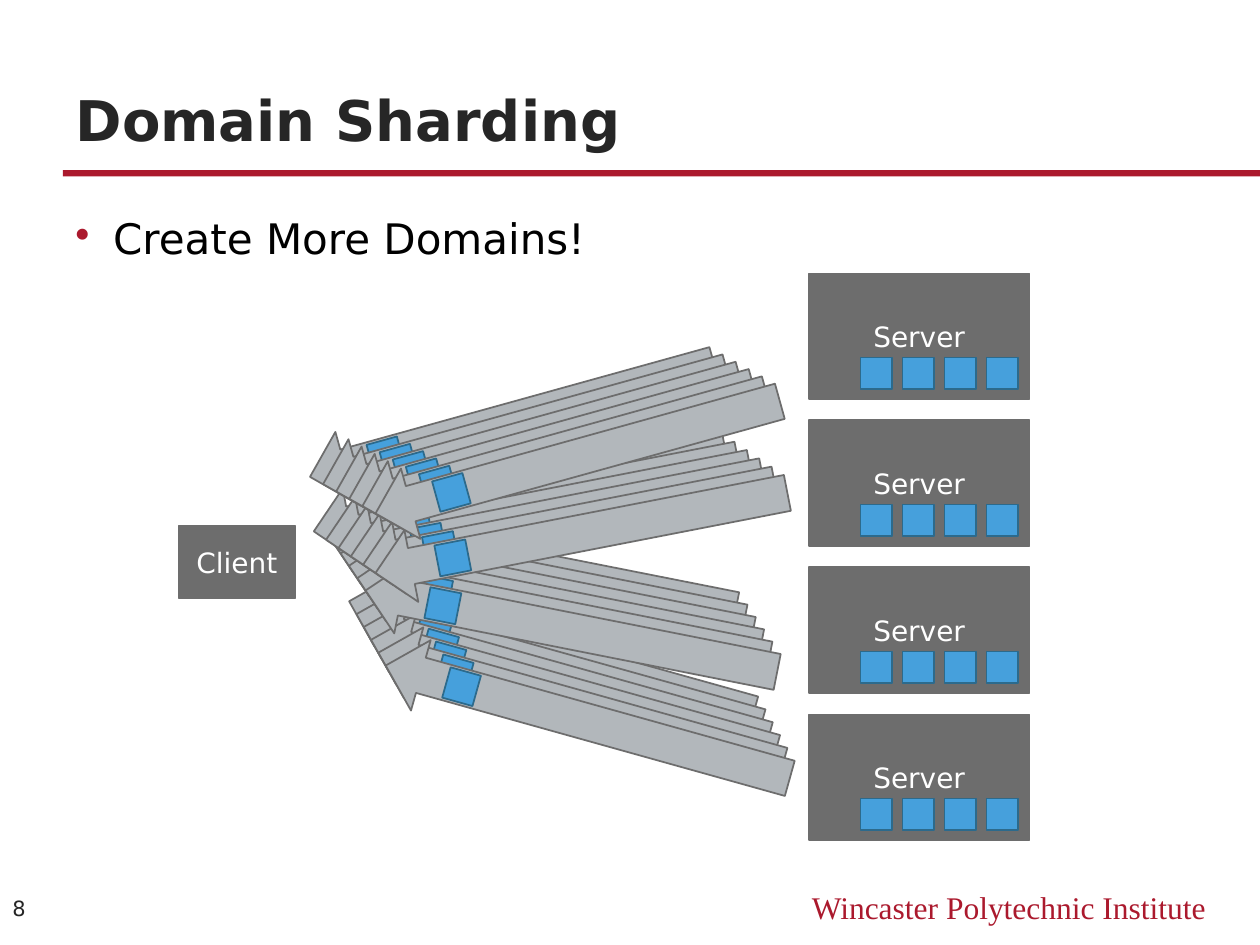
"""Build the Domain Sharding slide."""
from dataclasses import dataclass
from math import cos, radians, sin
from typing import Any

from lxml import etree
from pptx import Presentation
from pptx.dml.color import RGBColor
from pptx.enum.shapes import MSO_SHAPE
from pptx.enum.text import MSO_ANCHOR, MSO_AUTO_SIZE, PP_ALIGN
from pptx.oxml.ns import qn
from pptx.util import Inches, Pt

RECT, ARROW = MSO_SHAPE.RECTANGLE, MSO_SHAPE.LEFT_ARROW
LEFT, MID, RIGHT = PP_ALIGN.LEFT, PP_ALIGN.CENTER, PP_ALIGN.RIGHT
TOP, CENTER, LOW = MSO_ANCHOR.TOP, MSO_ANCHOR.MIDDLE, MSO_ANCHOR.BOTTOM
FIT, FIXED = MSO_AUTO_SIZE.SHAPE_TO_FIT_TEXT, MSO_AUTO_SIZE.NONE
SANS, SERIF = "DejaVu Sans", "Times New Roman"
COLORS = {
    "red": "AB192D", "ink": "262626", "black": "000000", "white": "FFFFFF",
    "gray": "6D6D6D", "pale": "B2B7BB", "blue": "46A0DC", "navy": "2C6A8C",
}
SIDE, LONG, TALL = 0.25, 3.33, 0.58
REACH = 1.04
COUNT = 6


@dataclass
class Box:
    """Place and size in inches."""
    x: float
    y: float
    w: float
    h: float


@dataclass
class Style:
    """Look of one run of text."""
    size: int
    color: str
    font: str = SANS
    bold: bool = False
    align: Any = LEFT


@dataclass
class Fan:
    """First and last arrow corners and the shared turn."""
    x: float
    y: float
    endx: float
    endy: float
    turn: float


LABEL = Style(16, "white", align=MID)
FANS = [
    Fan(2.71, 4.93, 3, 5.44, 15.6),
    Fan(2.54, 4.23, 2.87, 4.72, 11.2),
    Fan(2.46, 3.61, 2.95, 3.94, 349),
    Fan(2.4, 3.05, 2.92, 3.34, 344.5),
]


def paint(name: str) -> RGBColor:
    """Look up a colour."""
    return RGBColor.from_string(COLORS[name])


def place(shape: Any, box: Box) -> None:
    """Move and size a shape."""
    shape.left, shape.top = Inches(box.x), Inches(box.y)
    shape.width, shape.height = Inches(box.w), Inches(box.h)


def write(shape: Any, text: str, style: Style, anchor: Any, wrap: bool = True) -> Any:
    """Put one styled run in a shape and return its paragraph."""
    frame = shape.text_frame
    frame.word_wrap = wrap
    frame.vertical_anchor = anchor
    para = frame.paragraphs[0]
    para.alignment = style.align
    run = para.add_run()
    run.text = text
    font = run.font
    font.name, font.size, font.bold = style.font, Pt(style.size), style.bold
    font.color.rgb = paint(style.color)
    return para


def draw(shapes: Any, kind: Any, box: Box, fill: str, line: str = "", turn: float = 0) -> Any:
    """Add a filled preset shape."""
    shape = shapes.add_shape(kind, 0, 0, 0, 0)
    place(shape, box)
    shape.shadow.inherit = False
    shape.rotation = turn
    shape.fill.solid()
    shape.fill.fore_color.rgb = paint(fill)
    if line:
        shape.line.color.rgb = paint(line)
        shape.line.width = Pt(1)
    else:
        shape.line.fill.background()
    return shape


def note(shapes: Any, box: Box, text: str, style: Style, anchor: Any = TOP) -> Any:
    """Add a text box and return its shape."""
    shape = shapes.add_textbox(0, 0, 0, 0)
    place(shape, box)
    write(shape, text, style, anchor)
    return shape


def bullet(para: Any) -> None:
    """Give a paragraph a red dot and a hanging indent."""
    para.line_spacing = 0.95
    para.space_before = Pt(12)
    props = para._p.get_or_add_pPr()
    props.set("marL", str(Inches(0.3)))
    props.set("indent", str(Inches(-0.3)))
    tint = etree.SubElement(props, qn("a:buClr"))
    etree.SubElement(tint, qn("a:srgbClr"), val=COLORS["red"])
    etree.SubElement(props, qn("a:buChar"), char="•")


def cube(shapes: Any, x: float, y: float, turn: float = 0) -> None:
    """Add a blue square."""
    draw(shapes, RECT, Box(x, y, SIDE, SIDE), "blue", "navy", turn)


def server(shapes: Any, y: float) -> None:
    """Add a server with its row of squares."""
    group = shapes.add_group_shape().shapes
    body = draw(group, RECT, Box(6.42, y, 1.75, 1), "gray", "gray")
    write(body, "Server", LABEL, CENTER, False)
    for col in range(4):
        cube(group, 6.83 + col / 3, y + 2 / 3)


def spread(shapes: Any, fan: Fan) -> None:
    """Add a stack of arrows, each with a square on its shaft."""
    group = shapes.add_group_shape().shapes
    angle = radians(fan.turn)
    for step in range(COUNT):
        part = step / (COUNT - 1)
        x = fan.x + (fan.endx - fan.x) * part
        y = fan.y + (fan.endy - fan.y) * part
        draw(group, ARROW, Box(x, y, LONG, TALL), "pale", "gray", fan.turn)
        left = x + (LONG - SIDE) / 2 - REACH * cos(angle)
        top = y + (TALL - SIDE) / 2 - REACH * sin(angle)
        cube(group, left, top, fan.turn)


def main() -> None:
    """Build and save the slide."""
    deck = Presentation()
    deck.slide_width, deck.slide_height = Inches(10), Inches(7.5)
    slide = deck.slides.add_slide(deck.slide_layouts[5])
    shapes = slide.shapes

    draw(shapes, RECT, Box(0.5, 1.35, 9.5, 0.05), "red")
    foot = note(shapes, Box(6, 7, 3.67, 0.4), "Wincaster Polytechnic Institute",
                Style(18, "red", SERIF, align=RIGHT))
    foot.text_frame.auto_size = FIT

    title = shapes.title
    place(title, Box(0.5, 0.38, 9, 0.88))
    write(title, "Domain Sharding", Style(32, "ink", bold=True), LOW)
    title.text_frame.auto_size = FIXED

    body = note(shapes, Box(0.5, 1.67, 9, 5.08), "Create More Domains!", Style(24, "black"))
    bullet(body.text_frame.paragraphs[0])
    note(shapes, Box(0, 6.99, 0.5, 0.43), "8", Style(12, "ink"), CENTER)

    client = draw(shapes, RECT, Box(1.42, 4.17, 0.92, 0.58), "gray", "gray")
    write(client, "Client", LABEL, CENTER, False)
    for row in range(4):
        server(shapes, 2.17 + row * 3.5 / 3)
    for fan in FANS:
        spread(shapes, fan)

    deck.save("out.pptx")


if __name__ == "__main__":
    main()
